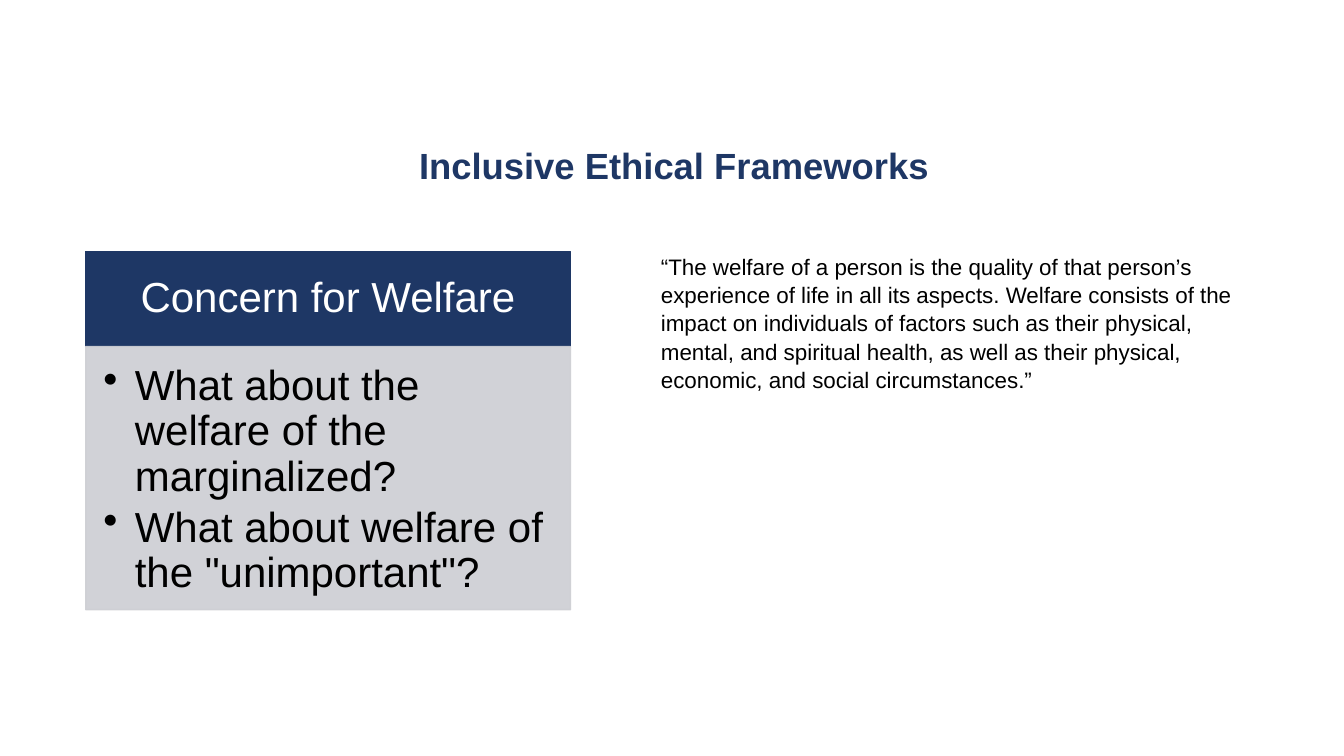
from lxml.etree import SubElement
from pptx import Presentation
from pptx.dml.color import RGBColor
from pptx.enum.shapes import MSO_SHAPE
from pptx.enum.text import MSO_ANCHOR, PP_ALIGN
from pptx.oxml.ns import qn
from pptx.util import Pt

NAVY = RGBColor(0x1E, 0x37, 0x65)
GREY = RGBColor(0xCD, 0xCE, 0xD3)
WHITE = RGBColor(0xFF, 0xFF, 0xFF)
BLACK = RGBColor(0, 0, 0)

# Card geometry in points
CARD_LEFT, CARD_TOP, CARD_WIDTH = 61.2, 179.5, 346.3
HEADER_HEIGHT, BODY_HEIGHT = 68, 188


def write(tf, *paragraphs, size, color=BLACK, bold=False, align=PP_ALIGN.LEFT,
          anchor=MSO_ANCHOR.TOP, spacing=0.9, after=0, bullet_indent=0,
          insets=(7.2, 3.6, 7.2, 3.6)):
    """Fill a text frame with equally formatted paragraphs."""
    tf.word_wrap = True
    tf.vertical_anchor = anchor
    tf.margin_left, tf.margin_top, tf.margin_right, tf.margin_bottom = map(Pt, insets)
    for i, text in enumerate(paragraphs):
        p = tf.add_paragraph() if i else tf.paragraphs[0]
        if bullet_indent:
            pPr = p._p.get_or_add_pPr()
            pPr.set("marL", str(Pt(bullet_indent)))
            pPr.set("indent", str(-Pt(bullet_indent)))
            SubElement(pPr, qn("a:buChar"), char="•")
        p.alignment = align
        p.line_spacing = spacing
        p.space_before = Pt(0)
        p.space_after = Pt(after)
        r = p.add_run()
        r.text = text
        r.font.name = Style.font
        r.font.size = Pt(size)
        r.font.bold = bold
        r.font.color.rgb = color


class Style:
    """Holds the font and the current slide, and adds elements to it."""
    font = "Arial"

    def __init__(self, slide):
        self.slide = slide

    def title(self, text, left, top, width, height, **fmt):
        sp = self.slide.shapes.title
        sp.left, sp.top, sp.width, sp.height = map(Pt, (left, top, width, height))
        write(sp.text_frame, text, **fmt)

    def panel(self, left, top, width, height, fill, *paragraphs, opacity=100, **fmt):
        sp = self.slide.shapes.add_shape(
            MSO_SHAPE.RECTANGLE, *map(Pt, (left, top, width, height)))
        sp.shadow.inherit = False
        sp.line.width = Pt(1)
        sp.fill.solid()
        sp.line.fill.solid()
        for paint in (sp.fill, sp.line.fill):
            paint.fore_color.rgb = fill
        if opacity < 100:
            for clr in sp._element.spPr.iter(qn("a:srgbClr")):
                SubElement(clr, qn("a:alpha"), val=str(opacity * 1000))
        write(sp.text_frame, *paragraphs, **fmt)

    def text(self, text, left, top, width, height, **fmt):
        sp = self.slide.shapes.add_textbox(*map(Pt, (left, top, width, height)))
        write(sp.text_frame, text, **fmt)


def main():
    prs = Presentation()
    prs.slide_width, prs.slide_height = Pt(960), Pt(540)
    s = Style(prs.slides.add_slide(prs.slide_layouts[5]))

    # Title
    s.title("Inclusive Ethical Frameworks", 108, 84.2, 747.4, 70.6, size=26,
            color=NAVY, bold=True, align=PP_ALIGN.CENTER, anchor=MSO_ANCHOR.MIDDLE)

    # Card: header above its questions
    s.panel(CARD_LEFT, CARD_TOP, CARD_WIDTH, HEADER_HEIGHT, NAVY,
            "Concern for Welfare", size=30, color=WHITE, align=PP_ALIGN.CENTER,
            anchor=MSO_ANCHOR.MIDDLE, insets=(16.8, 9.6, 16.8, 9.6))
    s.panel(CARD_LEFT, CARD_TOP + HEADER_HEIGHT, CARD_WIDTH, BODY_HEIGHT, GREY,
            "What about the welfare of the marginalized?",
            'What about welfare of the "unimportant"?',
            opacity=90, size=30, after=4, bullet_indent=22.5,
            insets=(12.6, 12.6, 16.8, 18.9))

    # Quotation
    s.text("“The welfare of a person is the quality of that person’s experience of "
           "life in all its aspects. Welfare consists of the impact on individuals of "
           "factors such as their physical, mental, and spiritual health, as well as "
           "their physical, economic, and social circumstances.”",
           465, 176.4, 445, 104.4, size=16, spacing=1.05)

    prs.save("out.pptx")


if __name__ == "__main__":
    main()
